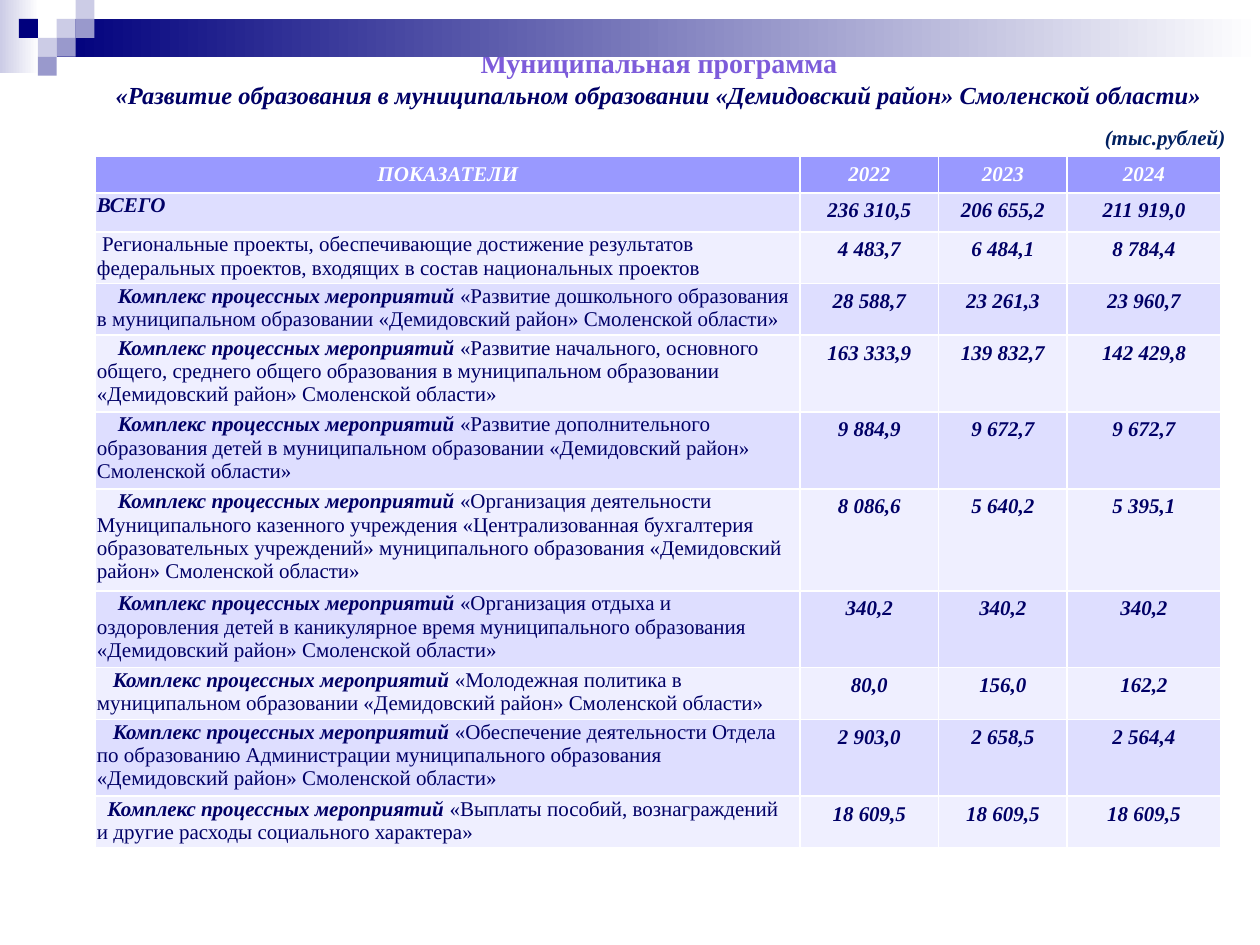
from pptx import Presentation
from pptx.dml.color import RGBColor
from pptx.enum.shapes import MSO_SHAPE as Shape
from pptx.enum.text import MSO_ANCHOR as Anchor, MSO_AUTO_SIZE as AutoSize, PP_ALIGN as Align
from pptx.util import Inches, Pt

NAVY = RGBColor(0x00, 0x00, 0x7D)
MIST = RGBColor(0xCC, 0xCC, 0xE6)
LAVENDER = RGBColor(0x99, 0x99, 0xCC)
WHITE = RGBColor(0xFF, 0xFF, 0xFF)
INK = RGBColor(0x00, 0x00, 0x66)
VIOLET = RGBColor(0x7D, 0x5C, 0xDA)
UNIT_BLUE = RGBColor(0x00, 0x20, 0x60)
HEADER_FILL = RGBColor(0x99, 0x99, 0xFF)
BAND_FILLS = [RGBColor(0xDE, 0xDE, 0xFF), RGBColor(0xEF, 0xEF, 0xFF)]

presentation = Presentation()
presentation.slide_width, presentation.slide_height = Inches(10), Inches(7.5)
slide = presentation.slides.add_slide(presentation.slide_layouts[5])
grid = presentation.slide_width // 100


def box(left, top, width, height):
    return [int(length * grid) for length in (left, top, width, height)]


def add_run(paragraph, text, color, size=12, bold=True, italic=True):
    run = paragraph.add_run()
    run.text = text
    run.font.color.rgb = color
    formats = {"name": "Times New Roman", "size": Pt(size), "bold": bold, "italic": italic}
    for attribute, value in formats.items():
        setattr(run.font, attribute, value)


square = 1.5
decorations = [
    (0, 0, 3.1, 5.8, MIST, WHITE),
    (4.5, 1.5, 95.5, 3, NAVY, WHITE),
]
for column, row, color in [
    (3, 1, MIST), (4, 0, MIST), (4, 1, LAVENDER), (2, 2, MIST),
    (1, 1, NAVY), (3, 2, LAVENDER), (2, 3, LAVENDER),
]:
    decorations.append((column * square, row * square, square, square, color, None))

for left, top, width, height, color, fade in decorations:
    shape = slide.shapes.add_shape(Shape.RECTANGLE, *box(left, top, width, height))
    shape.shadow.inherit = False
    shape.line.fill.background()
    if fade is None:
        shape.fill.solid()
        shape.fill.fore_color.rgb = color
    else:
        shape.fill.gradient()
        shape.fill.gradient_angle = 0
        for stop, stop_color in zip(shape.fill.gradient_stops, (color, fade)):
            stop.color.rgb = stop_color

PROCESS = "Комплекс процессных мероприятий "
DISTRICT = "«Демидовский район» Смоленской области»"
years = ["2022", "2023", "2024"]
programme_rows = [
    (3.1, 0, "ВСЕГО", "", ["236 310,5", "206 655,2", "211 919,0"]),
    (4.1, 1, "", "Региональные проекты, обеспечивающие достижение результатов федеральных "
     "проектов, входящих в состав национальных проектов", ["4 483,7", "6 484,1", "8 784,4"]),
    (4.1, 4, PROCESS, "«Развитие дошкольного образования в муниципальном образовании " + DISTRICT,
     ["28 588,7", "23 261,3", "23 960,7"]),
    (6.1, 4, PROCESS, "«Развитие начального, основного общего, среднего общего образования "
     "в муниципальном образовании " + DISTRICT, ["163 333,9", "139 832,7", "142 429,8"]),
    (6.1, 4, PROCESS, "«Развитие дополнительного образования детей в муниципальном образовании "
     + DISTRICT, ["9 884,9", "9 672,7", "9 672,7"]),
    (8.1, 4, PROCESS, "«Организация деятельности Муниципального казенного учреждения "
     "«Централизованная бухгалтерия образовательных учреждений» муниципального образования "
     + DISTRICT, ["8 086,6", "5 640,2", "5 395,1"]),
    (6.1, 4, PROCESS, "«Организация отдыха и оздоровления детей в каникулярное время "
     "муниципального образования " + DISTRICT, ["340,2", "340,2", "340,2"]),
    (4.1, 3, PROCESS, "«Молодежная политика в муниципальном образовании " + DISTRICT,
     ["80,0", "156,0", "162,2"]),
    (6.1, 3, PROCESS, "«Обеспечение деятельности Отдела по образованию Администрации "
     "муниципального образования " + DISTRICT, ["2 903,0", "2 658,5", "2 564,4"]),
    (4.1, 2, PROCESS, "«Выплаты пособий, вознаграждений и другие расходы социального характера»",
     ["18 609,5", "18 609,5", "18 609,5"]),
]
column_widths = [55.9, 11, 10.2, 12.2]
row_heights = [2.9] + [entry[0] for entry in programme_rows]
table = slide.shapes.add_table(
    len(row_heights), len(column_widths),
    *box(7.6, 12.4, sum(column_widths), sum(row_heights))).table
for column, width in zip(table.columns, column_widths):
    column.width = int(width * grid)
for row, height in zip(table.rows, row_heights):
    row.height = int(height * grid)

for cell, text in zip(table.rows[0].cells, ["ПОКАЗАТЕЛИ"] + years):
    cell.fill.solid()
    cell.fill.fore_color.rgb = HEADER_FILL
    paragraph = cell.text_frame.paragraphs[0]
    paragraph.alignment = Align.CENTER
    add_run(paragraph, text, WHITE)

label_margins = {"margin_left": 0.01, "margin_top": 0.01, "margin_right": 0.06, "margin_bottom": 0}
for index, (height, indent, label, text, amounts) in enumerate(programme_rows):
    cells = list(table.rows[index + 1].cells)
    for cell in cells:
        cell.fill.solid()
        cell.fill.fore_color.rgb = BAND_FILLS[index % 2]
    for attribute, value in label_margins.items():
        setattr(cells[0], attribute, Inches(value))
    paragraph = cells[0].text_frame.paragraphs[0]
    paragraph._p.get_or_add_pPr().set("indent", str(Pt(3 * indent)))
    if label:
        add_run(paragraph, label, INK)
    if text:
        add_run(paragraph, text, INK, bold=False, italic=False)
    for cell, amount in zip(cells[1:], amounts):
        paragraph = cell.text_frame.paragraphs[0]
        paragraph.alignment = Align.CENTER
        add_run(paragraph, amount, INK)

title = slide.shapes.title
title.left, title.top, title.width, title.height = box(7, 3.1, 90.6, 6.1)
unit_label = slide.shapes.add_textbox(*box(86.7, 9.4, 11.7, 3))
frame_formats = {"auto_size": AutoSize.NONE, "vertical_anchor": Anchor.MIDDLE}
for shape, wrap in [(title, True), (unit_label, False)]:
    shape.text_frame.word_wrap = wrap
    for attribute, value in frame_formats.items():
        setattr(shape.text_frame, attribute, value)

heading = title.text_frame.paragraphs[0]
subheading = title.text_frame.add_paragraph()
add_run(heading, "Муниципальная программа", VIOLET, size=16, italic=False)
add_run(subheading, "«Развитие образования в муниципальном образовании " + DISTRICT, INK, size=14)
for paragraph in (heading, subheading):
    paragraph.alignment = Align.CENTER
add_run(unit_label.text_frame.paragraphs[0], "(тыс.рублей)", UNIT_BLUE)

presentation.save("out.pptx")
